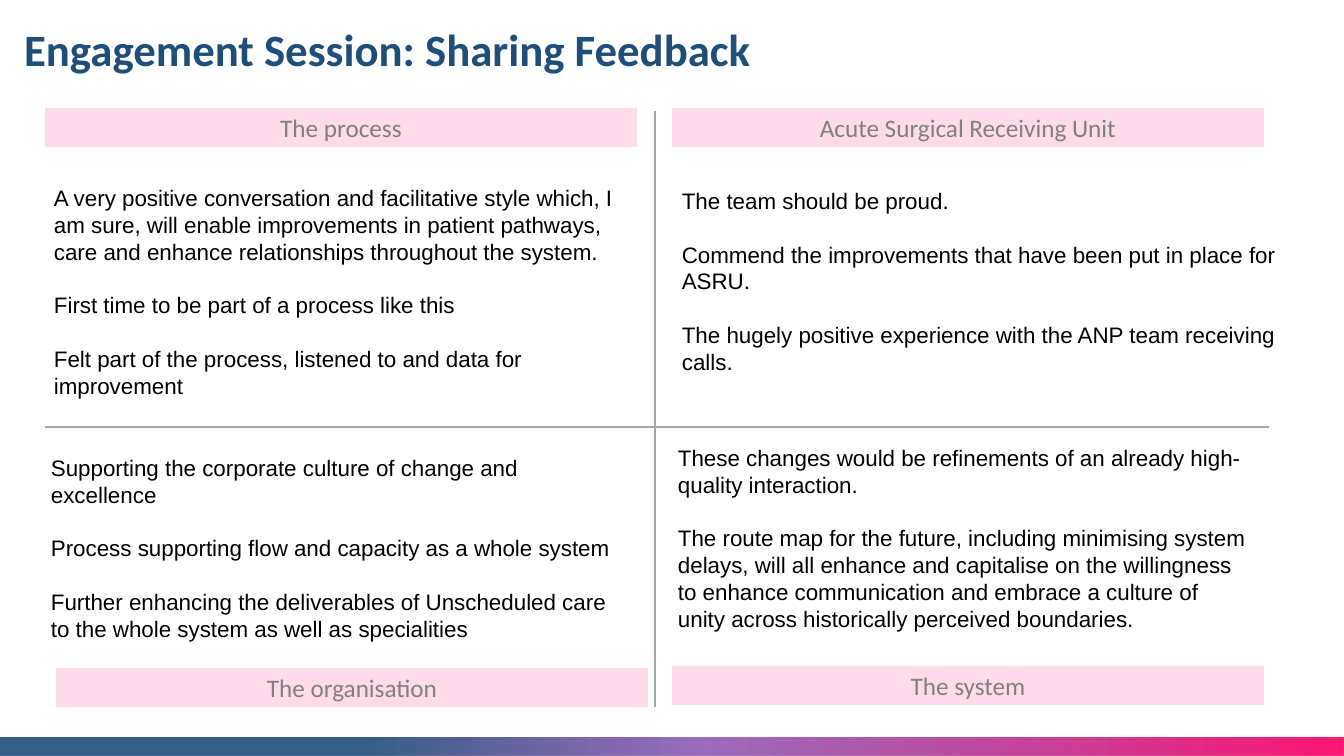
import lxml.etree
import pptx
import pptx.dml.color
import pptx.enum.shapes
import pptx.enum.text
import pptx.oxml.ns
import pptx.util

PX = 914400 / 100.8  # EMU in one px

NAVY = pptx.dml.color.RGBColor(0x1F, 0x4E, 0x79)
PURPLE = pptx.dml.color.RGBColor(0x70, 0x30, 0xA0)
PINK = pptx.dml.color.RGBColor(0xFF, 0x00, 0x66)
GREY = pptx.dml.color.RGBColor(0x80, 0x80, 0x80)
RULE_GREY = pptx.dml.color.RGBColor(0xA6, 0xA6, 0xA6)
BLACK = pptx.dml.color.RGBColor(0x00, 0x00, 0x00)

LINE_HEIGHT = pptx.util.Pt(19.2)
BAND_SIZE = (592, 39)

# Quadrant headings: text, left, top
HEADINGS = [
    ("The process", 45, 108),
    ("Acute Surgical Receiving Unit", 672, 108),
    ("The organisation", 56, 668),
    ("The system", 672, 666),
]

# Quadrant comments: left, top, width, height, top inset, paragraphs
COMMENTS = [
    (44, 164, 582, 241, 20, [
        "A very positive conversation and facilitative style which, I am sure, will enable "
        "improvements in patient pathways, care and enhance relationships throughout the system.",
        "First time to be part of a process like this",
        "Felt part of the process, listened to and data for improvement",
    ]),
    (672, 182, 624, 231, 5, [
        "The team should be proud.",
        "Commend the improvements that have been put in place for ASRU.",
        "The hugely positive experience with the ANP team receiving calls.",
    ]),
    (41, 449, 588, 258, 5, [
        "Supporting the corporate culture of change and excellence",
        "Process supporting flow and capacity as a whole system",
        "Further enhancing the deliverables of Unscheduled care to the whole system "
        "as well as specialities",
    ]),
    (668, 439, 588, 231, 5, [
        "These changes would be refinements of an already high-quality interaction.",
        "The route map for the future, including minimising system delays, will all enhance "
        "and capitalise on the willingness to enhance communication and embrace a culture of "
        "unity across historically perceived boundaries.",
    ]),
]


def px(*lengths):
    return [pptx.util.Emu(round(length * PX)) for length in lengths]


def add_child(parent, tag, **attributes):
    return lxml.etree.SubElement(parent, pptx.oxml.ns.qn(tag), **attributes)


def set_alpha(color_element, percent):
    add_child(color_element, "a:alpha", val=str(percent * 1000))


def add_span(para, text, font_name, size, color, bold=False):
    span = para.add_run()
    span.text = text
    span.font.name = font_name
    span.font.size = pptx.util.Pt(size)
    span.font.color.rgb = color
    span.font.bold = bold


def add_rectangle(page, left, top, width, height):
    box = page.shapes.add_shape(
        pptx.enum.shapes.MSO_SHAPE.RECTANGLE, *px(left, top, width, height))
    box.shadow.inherit = False
    box.line.fill.background()
    return box


def set_title(page, text):
    title = page.shapes.title
    title.left, title.top, title.width, title.height = px(14, 17, 763, 65)
    frame = title.text_frame
    frame.word_wrap = False
    frame.vertical_anchor = pptx.enum.text.MSO_ANCHOR.TOP
    para = frame.paragraphs[0]
    para.alignment = pptx.enum.text.PP_ALIGN.LEFT
    add_span(para, text, "Calibri", 32, NAVY, bold=True)


def add_footer_bar(page):
    bar = add_rectangle(page, 0, 738, 1344, 18)
    bar.fill.gradient()
    bar.fill.gradient_angle = 0
    stops = bar._element.spPr.find(".//" + pptx.oxml.ns.qn("a:gsLst"))
    for stop in list(stops):
        stops.remove(stop)
    for position, color, opacity in [(27, NAVY, 90), (52, PURPLE, 70), (100, PINK, 91)]:
        stop = add_child(stops, "a:gs", pos=str(position * 1000))
        set_alpha(add_child(stop, "a:srgbClr", val=str(color)), opacity)


def add_heading(page, text, left, top):
    band = add_rectangle(page, left, top, *BAND_SIZE)
    band.fill.solid()
    band.fill.fore_color.rgb = PINK
    set_alpha(band._element.spPr.find(".//" + pptx.oxml.ns.qn("a:srgbClr")), 14)
    frame = band.text_frame
    frame.vertical_anchor = pptx.enum.text.MSO_ANCHOR.MIDDLE
    para = frame.paragraphs[0]
    para.alignment = pptx.enum.text.PP_ALIGN.CENTER
    add_span(para, text, "Calibri", 18, GREY)


def add_comments(page, left, top, width, height, inset, texts):
    box = page.shapes.add_textbox(*px(left, top, width, height))
    frame = box.text_frame
    frame.word_wrap = True
    frame.margin_top = px(inset)[0]
    for index, text in enumerate(texts):
        para = frame.add_paragraph() if index else frame.paragraphs[0]
        para.line_spacing = LINE_HEIGHT
        if index:
            para.space_before = LINE_HEIGHT
        add_span(para, text, "Arial", 16, BLACK)


def add_divider(page, *ends):
    divider = page.shapes.add_connector(
        pptx.enum.shapes.MSO_CONNECTOR.STRAIGHT, *px(*ends))
    divider.line.color.rgb = RULE_GREY
    divider.line.width = pptx.util.Pt(1)
    add_child(divider._element.spPr, "a:effectLst")


def main():
    deck = pptx.Presentation()
    deck.slide_width, deck.slide_height = px(1344, 756)
    page = deck.slides.add_slide(deck.slide_layouts.get_by_name("Title Only"))

    # Title and footer
    set_title(page, "Engagement Session: Sharing Feedback")
    add_footer_bar(page)

    # Four quadrants
    for heading in HEADINGS:
        add_heading(page, *heading)
    for comments in COMMENTS:
        add_comments(page, *comments)

    # Dividing cross
    add_divider(page, 45, 427, 1269, 427)
    add_divider(page, 655, 111, 655, 707)

    deck.save("out.pptx")


if __name__ == "__main__":
    main()
